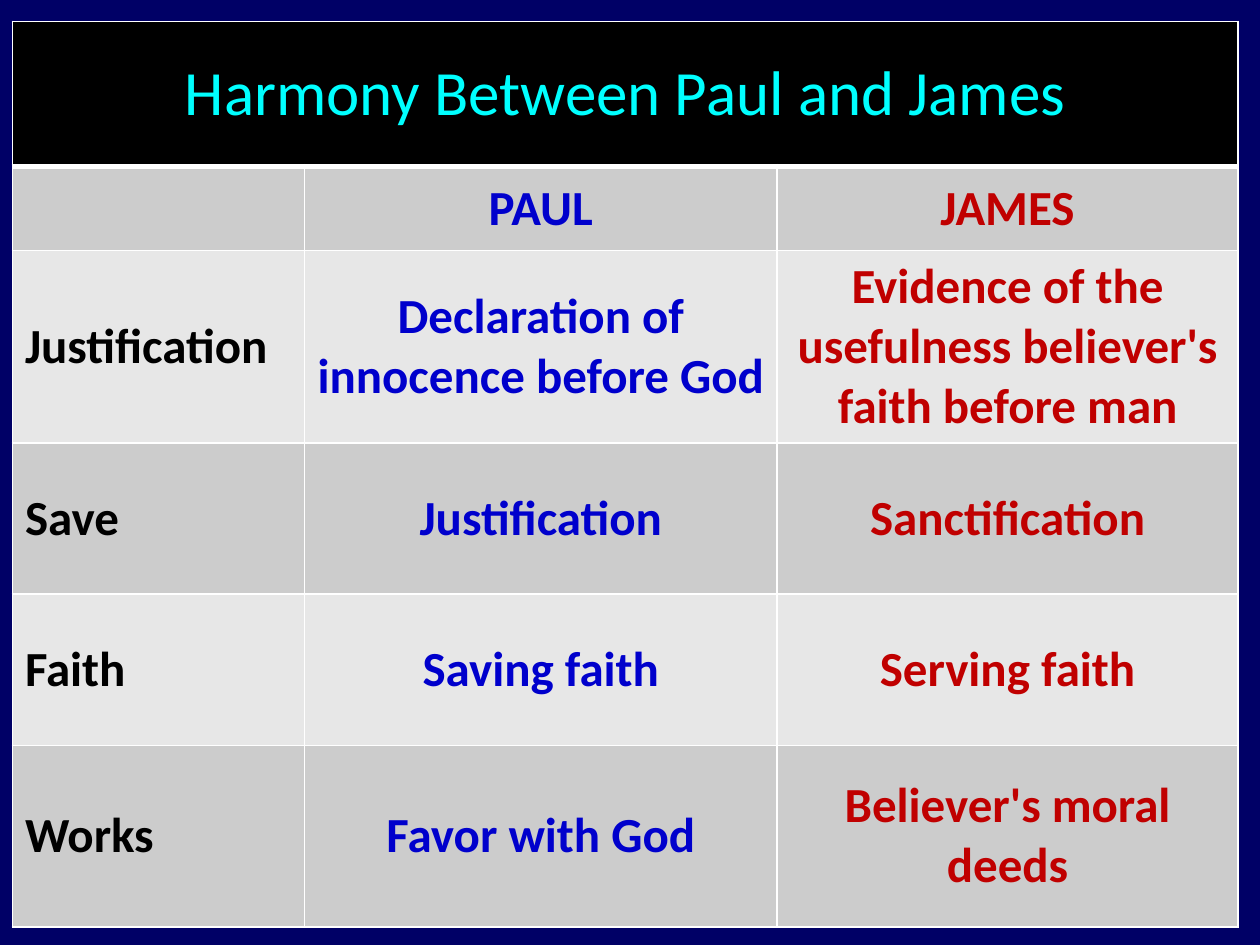
from dataclasses import dataclass

from lxml import etree
from pptx import Presentation
from pptx.dml.color import RGBColor
from pptx.enum.text import MSO_ANCHOR, PP_ALIGN
from pptx.oxml.ns import qn
from pptx.util import Cm, Pt

LEFT, CENTER = PP_ALIGN.LEFT, PP_ALIGN.CENTER
MIDDLE = MSO_ANCHOR.MIDDLE


@dataclass(frozen=True)
class Theme:
    font: str = "Calibri"
    background: str = "000066"
    banner: str = "000000"
    banner_text: str = "00FFFF"
    topic: str = "000000"
    paul: str = "0000CC"
    james: str = "C00000"
    bands: tuple[str, str] = ("CCCCCC", "E7E7E7")
    border: str = "FFFFFF"
    banner_size: int = 36
    body_size: int = 28
    thin: int = 1
    thick: int = 3


@dataclass(frozen=True)
class Column:
    width: float
    color: str
    align: PP_ALIGN


@dataclass(frozen=True)
class Comparison:
    height: float
    texts: tuple[str, str, str]


THEME = Theme()
BANNER = "Harmony Between Paul and James"
BANNER_HEIGHT = 2.92
COLUMNS = (
    Column(5.89, THEME.topic, LEFT),
    Column(9.52, THEME.paul, CENTER),
    Column(9.3, THEME.james, CENTER),
)
COMPARISONS = (
    Comparison(1.7, ("", "PAUL", "JAMES")),
    Comparison(3.84, (
        "Justification",
        "Declaration of innocence before God",
        "Evidence of the usefulness believer's faith before man",
    )),
    Comparison(3.05, ("Save", "Justification", "Sanctification")),
    Comparison(3.05, ("Faith", "Saving faith", "Serving faith")),
    Comparison(3.66, ("Works", "Favor with God", "Believer's moral deeds")),
)


def draw_borders(cell, top: int, bottom: int) -> None:
    widths = {"a:lnL": THEME.thin, "a:lnR": THEME.thin, "a:lnT": top, "a:lnB": bottom}
    properties = cell._tc.get_or_add_tcPr()
    for position, (side, width) in enumerate(widths.items()):
        line = etree.Element(qn(side), w=str(Pt(width)))
        fill = etree.SubElement(line, qn("a:solidFill"))
        etree.SubElement(fill, qn("a:srgbClr"), val=THEME.border)
        properties.insert(position, line)


def fill_cell(cell, fill: str) -> None:
    cell.fill.solid()
    cell.fill.fore_color.rgb = RGBColor.from_string(fill)
    cell.vertical_anchor = MIDDLE


def write_cell(cell, text: str, color: str, size: int, bold: bool, align: PP_ALIGN) -> None:
    cell.text_frame.text = text
    paragraph = cell.text_frame.paragraphs[0]
    paragraph.alignment = align
    for run in paragraph.runs:
        run.font.name = THEME.font
        run.font.size = Pt(size)
        run.font.bold = bold
        run.font.color.rgb = RGBColor.from_string(color)


def add_comparison_table(slide) -> None:
    heights = [BANNER_HEIGHT] + [comparison.height for comparison in COMPARISONS]
    widths = [column.width for column in COLUMNS]
    table = slide.shapes.add_table(
        len(heights), len(widths), Cm(0.25), Cm(0.43), Cm(sum(widths)), Cm(sum(heights))
    ).table
    for table_column, width in zip(table.columns, widths):
        table_column.width = Cm(width)
    for table_row, height in zip(table.rows, heights):
        table_row.height = Cm(height)

    banner = table.cell(0, 0)
    banner.merge(table.cell(0, len(COLUMNS) - 1))
    write_cell(banner, BANNER, THEME.banner_text, THEME.banner_size, False, CENTER)
    for cell in table.rows[0].cells:
        fill_cell(cell, THEME.banner)
        draw_borders(cell, THEME.thin, THEME.thick)

    for index, comparison in enumerate(COMPARISONS):
        top = THEME.thin if index else THEME.thick
        cells = table.rows[index + 1].cells
        for cell, column, text in zip(cells, COLUMNS, comparison.texts):
            fill_cell(cell, THEME.bands[index % 2])
            draw_borders(cell, top, THEME.thin)
            write_cell(cell, text, column.color, THEME.body_size, True, column.align)


def main() -> None:
    presentation = Presentation()
    presentation.slide_width = Cm(25.4)
    presentation.slide_height = Cm(19.05)
    slide = presentation.slides.add_slide(presentation.slide_layouts[6])
    slide.background.fill.solid()
    slide.background.fill.fore_color.rgb = RGBColor.from_string(THEME.background)
    add_comparison_table(slide)
    presentation.save("out.pptx")


if __name__ == "__main__":
    main()
